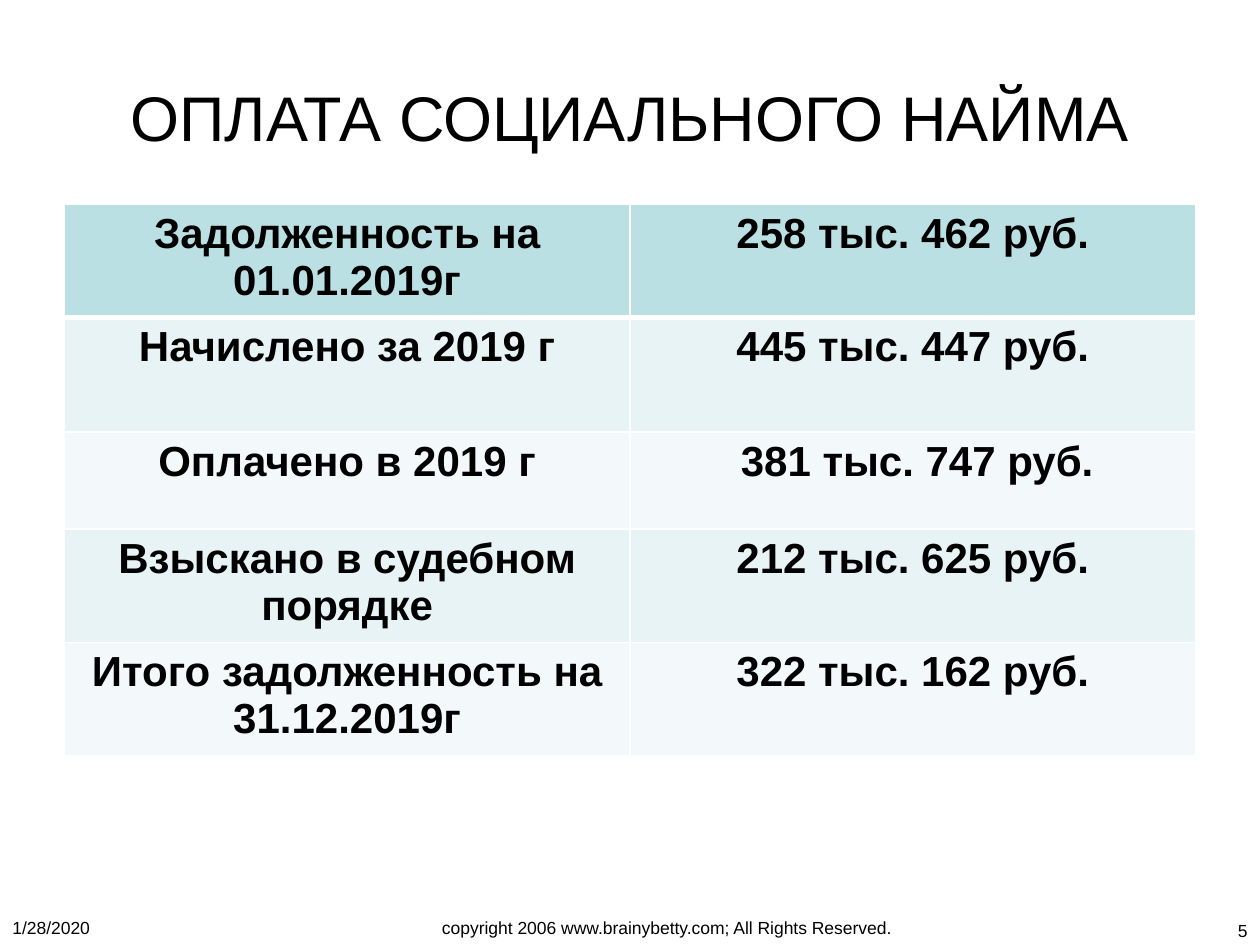
from lxml.etree import SubElement
from pptx import Presentation
from pptx.dml.color import RGBColor
from pptx.enum.text import MSO_ANCHOR as Anchor, PP_ALIGN as Align
from pptx.oxml.ns import qn
from pptx.util import Inches, Pt

BLACK = RGBColor(0x00, 0x00, 0x00)
WHITE = RGBColor(0xFF, 0xFF, 0xFF)
HEADER = RGBColor(0xBB, 0xE0, 0xE3)
BAND_DARK = RGBColor(0xE7, 0xF3, 0xF4)
BAND_LIGHT = RGBColor(0xF3, 0xF9, 0xFA)

PAYMENTS = [
    ("Задолженность на 01.01.2019г", "258 тыс. 462 руб."),
    ("Начислено за 2019 г", "445 тыс. 447 руб."),
    ("Оплачено в 2019 г", "381 тыс. 747 руб."),
    ("Взыскано в судебном порядке", "212 тыс. 625 руб."),
    ("Итого задолженность на 31.12.2019г", "322 тыс. 162 руб."),
]
ROW_HEIGHTS = [0.77, 0.91, 0.77, 0.77, 0.77]
PAID_ROW = 2


def write(frame, text, size, align, bold=False):
    para = frame.paragraphs[0]
    para.alignment = align
    span = para.add_run()
    span.text = text
    span.font.name = "Arial"
    span.font.size = Pt(size)
    span.font.bold = bold
    span.font.color.rgb = BLACK


def add_text(page, bounds, text, size, align, anchor=Anchor.TOP):
    box = page.shapes.add_textbox(*map(Inches, bounds))
    box.text_frame.word_wrap = True
    box.text_frame.vertical_anchor = anchor
    write(box.text_frame, text, size, align)


def add_border(cell, side, width):
    line = SubElement(cell._tc.get_or_add_tcPr(), qn(f"a:ln{side}"), w=str(Pt(width)))
    fill = SubElement(line, qn("a:solidFill"))
    SubElement(fill, qn("a:srgbClr"), val=str(WHITE))


def add_payment_table(page, left, top, width):
    frame = page.shapes.add_table(
        len(PAYMENTS), 2, Inches(left), Inches(top), Inches(width), Inches(sum(ROW_HEIGHTS))
    )
    table = frame.table
    for row, height in zip(table.rows, ROW_HEIGHTS):
        row.height = Inches(height)
    for row_index, texts in enumerate(PAYMENTS):
        band = BAND_DARK if row_index % 2 else BAND_LIGHT
        for column_index, text in enumerate(texts):
            cell = table.cell(row_index, column_index)
            for side in "LRTB":
                under_header = (row_index, side) in ((0, "B"), (1, "T"))
                add_border(cell, side, 3 if under_header else 1)
            cell.fill.solid()
            cell.fill.fore_color.rgb = band if row_index else HEADER
            write(cell.text_frame, text, 24, Align.CENTER, bold=True)
    table.cell(PAID_ROW, 1).margin_left = Inches(0.17)


def add_footer(page, top):
    add_text(page, (0, top, 2.33, 0.27), "1/28/2020", 10, Align.LEFT)
    add_text(
        page,
        (2.58, top, 5.42, 0.27),
        "copyright 2006 www.brainybetty.com; All Rights Reserved.",
        10,
        Align.CENTER,
    )
    add_text(page, (8.67, top + 0.02, 1.33, 0.25), "5", 10, Align.RIGHT)


def main():
    deck = Presentation()
    deck.slide_width = Inches(10)
    deck.slide_height = Inches(7.5)
    page = deck.slides.add_slide(deck.slide_layouts[6])
    add_text(
        page, (0.5, 0.3, 9, 1.25), "ОПЛАТА СОЦИАЛЬНОГО НАЙМА", 36, Align.CENTER, Anchor.MIDDLE
    )
    add_payment_table(page, 0.51, 1.62, 8.98)
    add_footer(page, 7.23)
    deck.save("out.pptx")


if __name__ == "__main__":
    main()
